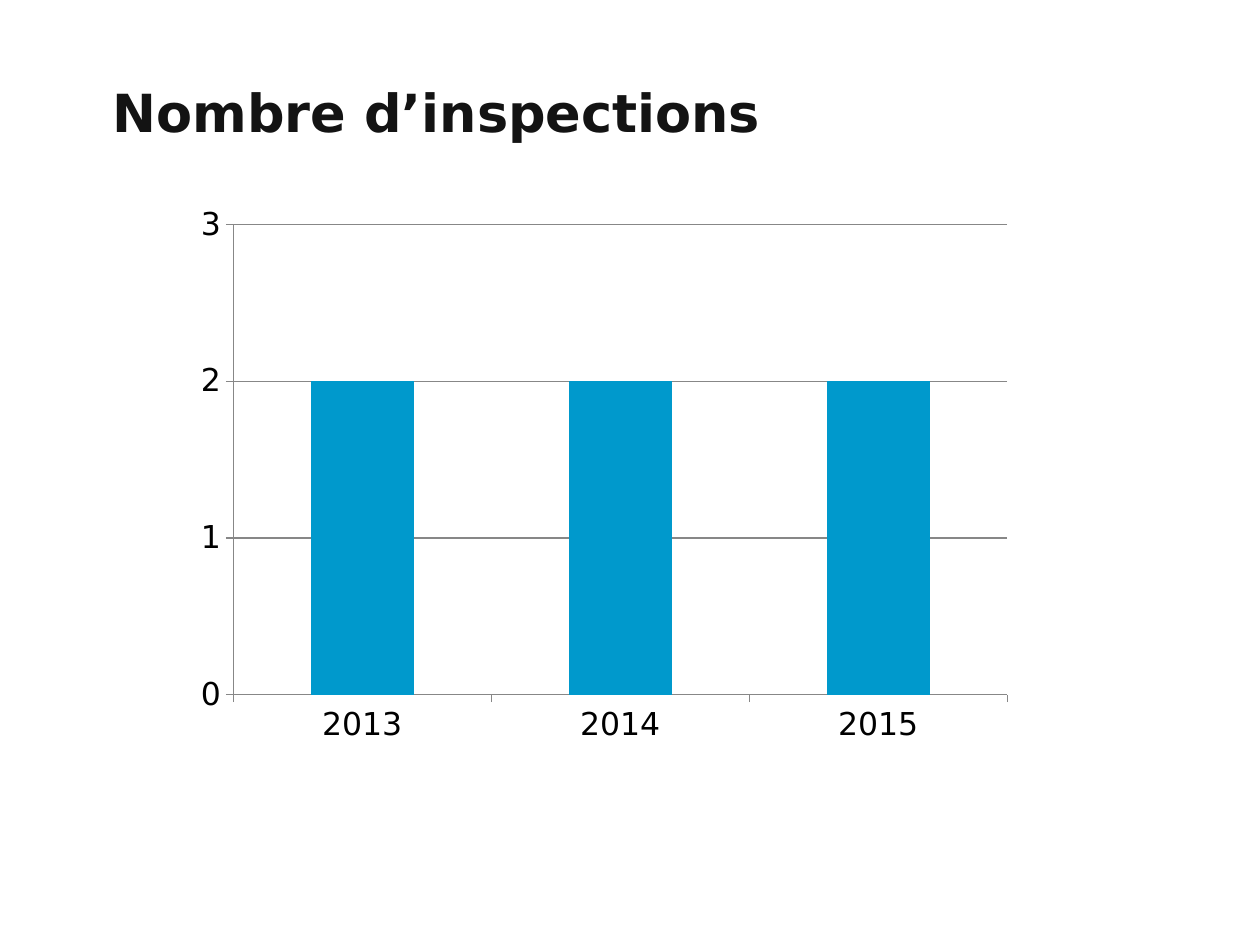
from dataclasses import dataclass

from pptx import Presentation
from pptx.chart.data import CategoryChartData
from pptx.dml.color import RGBColor
from pptx.enum.chart import XL_CHART_TYPE, XL_TICK_MARK
from pptx.enum.text import MSO_ANCHOR, PP_ALIGN
from pptx.util import Emu, Pt

FONT = "DejaVu Sans"
AXIS_COLOR = "878787"


@dataclass(frozen=True)
class Box:
    x: int
    y: int
    w: int
    h: int

    def emu(self) -> tuple:
        return tuple(px(v) for v in (self.x, self.y, self.w, self.h))


def px(n: int) -> Emu:
    return Emu(round(n * 914400 / 126))


def rgb(color: str) -> RGBColor:
    return RGBColor.from_string(color)


def style_font(font, size: int, color: str, bold: bool = False) -> None:
    font.name = FONT
    font.size = Pt(size)
    font.bold = bold
    font.color.rgb = rgb(color)


def write(sp, text: str, *, size: int, color: str, bold: bool = False) -> None:
    tf = sp.text_frame
    tf.word_wrap = True
    tf.vertical_anchor = MSO_ANCHOR.TOP
    p = tf.paragraphs[0]
    p.alignment = PP_ALIGN.LEFT
    r = p.add_run()
    r.text = text
    style_font(r.font, size, color, bold)


def style_line(fmt) -> None:
    fmt.line.color.rgb = rgb(AXIS_COLOR)
    fmt.line.width = Pt(0.75)


def add_inspections_chart(s, box: Box) -> None:
    data = CategoryChartData()
    data.categories = ["2013", "2014", "2015"]
    data.add_series("Series 1", [2, 2, 2])
    chart = s.shapes.add_chart(XL_CHART_TYPE.COLUMN_CLUSTERED, *box.emu(), data).chart
    chart.has_legend = False
    chart.has_title = False
    style_font(chart.font, 18, "000000")

    plot = chart.plots[0]
    plot.gap_width = 150
    plot.vary_by_categories = False
    fill = plot.series[0].format.fill
    fill.solid()
    fill.fore_color.rgb = rgb("0099CC")

    for axis in (chart.category_axis, chart.value_axis):
        axis.major_tick_mark = XL_TICK_MARK.OUTSIDE
        axis.minor_tick_mark = XL_TICK_MARK.NONE
        style_line(axis.format)
    axis = chart.value_axis
    axis.minimum_scale = 0
    axis.maximum_scale = 3
    axis.major_unit = 1
    axis.has_major_gridlines = True
    style_line(axis.major_gridlines.format)


def main() -> None:
    prs = Presentation()
    prs.slide_width, prs.slide_height = px(1260), px(945)
    s = prs.slides.add_slide(prs.slide_layouts[5])
    title = s.shapes.title
    title.left, title.top, title.width, title.height = Box(100, 74, 1091, 123).emu()
    write(title, "Nombre d’inspections", size=30, color="131313", bold=True)
    add_inspections_chart(s, Box(184, 195, 840, 560))
    prs.save("out.pptx")


if __name__ == "__main__":
    main()
